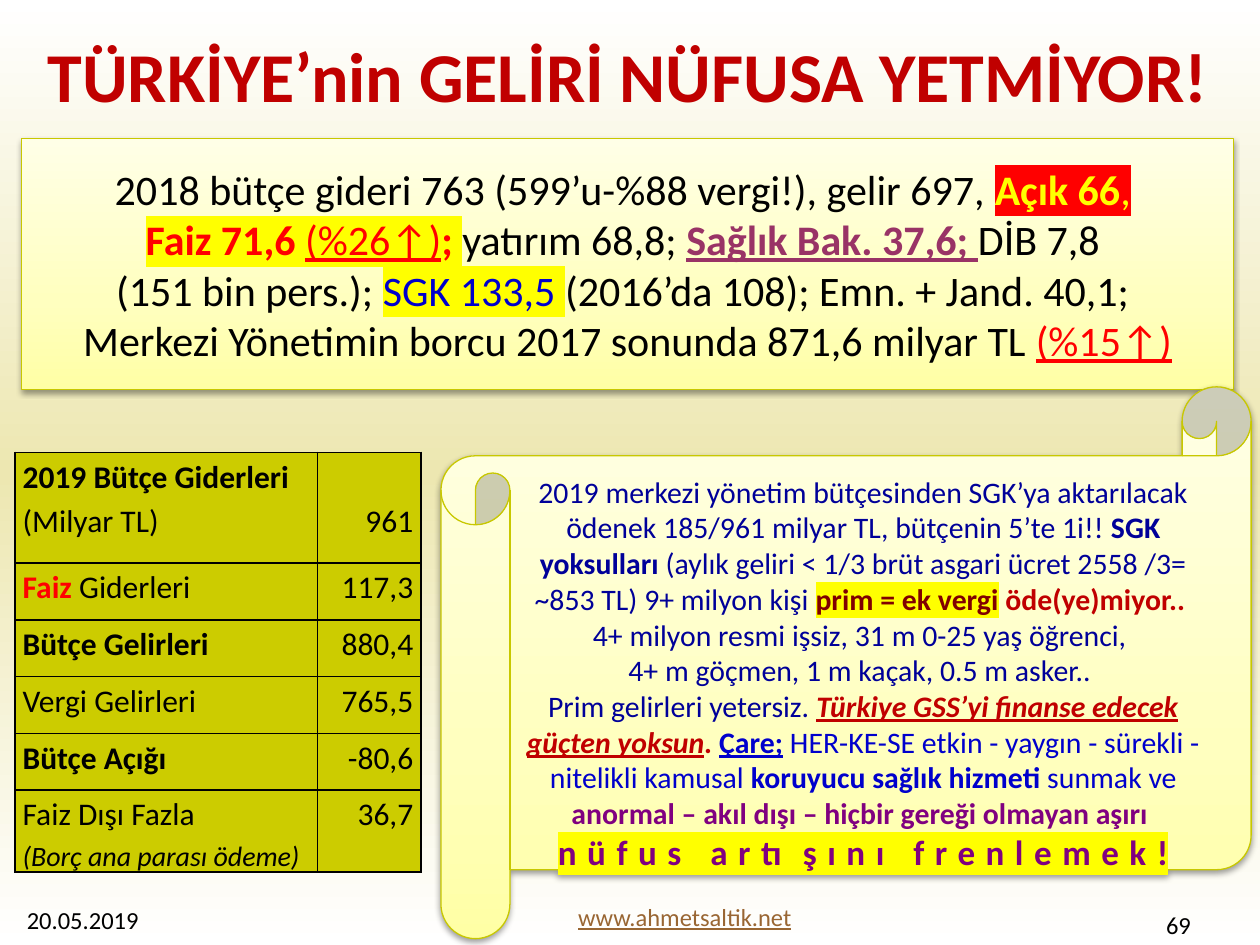
from copy import deepcopy

from lxml import etree
from pptx import Presentation
from pptx.dml.color import RGBColor
from pptx.enum.shapes import MSO_SHAPE
from pptx.enum.text import MSO_ANCHOR, PP_ALIGN
from pptx.oxml.ns import qn
from pptx.util import Emu, Pt

PX = 9144  # 100 px to the inch
LEFT, CENTER, RIGHT = PP_ALIGN.LEFT, PP_ALIGN.CENTER, PP_ALIGN.RIGHT
TOP, MIDDLE = MSO_ANCHOR.TOP, MSO_ANCHOR.MIDDLE
RECTANGLE, SCROLL = MSO_SHAPE.RECTANGLE, MSO_SHAPE.HORIZONTAL_SCROLL

COLORS = {
    "black": "000000", "crimson": "C00000", "red": "FF0000", "yellow": "FFFF00",
    "plum": "993366", "blue": "0000CC", "navy": "000099", "maroon": "800000",
    "magenta": "990099", "purple": "800080", "brown": "996633",
    "olive": "CCCC00", "outline": "C8C800",
}
PAPER = [(0, "FFFFA5"), (35, "FFFFBF"), (100, "FFFFE7")]
BACKDROP = [(0, "FFFFFF"), (50, "EDE7B1"), (100, "FFFFFF")]


def px(length):
    return Emu(length * PX)


def rgb(name):
    return RGBColor.from_string(COLORS[name])


def add_child(parent, tag, **attributes):
    child = etree.SubElement(parent, qn(tag))
    for name, value in attributes.items():
        child.set(name, str(value))
    return child


def set_gradient(fill, element, stops, angle):
    """Fill with any number of (percent, hex) stops; element holds the fill."""
    fill.gradient()
    fill.gradient_angle = angle
    stop_list = element.find(".//" + qn("a:gsLst"))
    for old_stop in list(stop_list):
        stop_list.remove(old_stop)
    for percent, color in stops:
        stop = add_child(stop_list, "a:gs", pos=percent * 1000)
        add_child(stop, "a:srgbClr", val=color)


class SlideBuilder:
    font = "Calibri"

    def __init__(self, slide):
        self.slide = slide

    def background(self, stops):
        set_gradient(self.slide.background.fill, self.slide.element, stops, 270)

    def add_run(self, paragraph, text, color="black", highlight=None, spacing=None,
                **formats):
        run = paragraph.add_run()
        run.text = text
        for name, value in {"name": self.font, **formats}.items():
            setattr(run.font, name, value)
        run.font.color.rgb = rgb(color)
        properties = run.font._element
        if spacing:
            properties.set("spc", str(spacing * 100))
        if highlight:
            mark = etree.Element(qn("a:highlight"))
            add_child(mark, "a:srgbClr", val=COLORS[highlight])
            properties.find(qn("a:solidFill")).addnext(mark)
        return properties

    def add_runs(self, frame, runs, align=LEFT, **base):
        """Add (text, formats) runs over base formats; \\n breaks the line."""
        paragraph = frame.paragraphs[0]
        paragraph.alignment = align
        for text, formats in runs:
            for index, line in enumerate(text.split("\n")):
                if index:
                    paragraph.add_line_break()
                    paragraph._p.findall(qn("a:br"))[-1].append(deepcopy(properties))
                if line:
                    properties = self.add_run(paragraph, line, **{**base, **formats})
        return paragraph

    def text(self, box, runs, align=LEFT, anchor=TOP, **base):
        frame = self.slide.shapes.add_textbox(*map(px, box)).text_frame
        frame.word_wrap = True
        frame.vertical_anchor = anchor
        self.add_runs(frame, runs, align, **base)

    def panel(self, kind, box, runs, anchor, margins, **base):
        shape = self.slide.shapes.add_shape(kind, *map(px, box))
        set_gradient(shape.fill, shape.element, PAPER, 90)
        shape.line.color.rgb = rgb("outline")
        shape.line.width = Pt(0.75)
        shape.shadow.inherit = False
        effects = shape.element.spPr.find(qn("a:effectLst"))
        shadow = add_child(effects, "a:outerShdw", blurRad=40000, dist=20000,
                           dir=5400000, rotWithShape=0)
        color = add_child(shadow, "a:srgbClr", val=COLORS["black"])
        add_child(color, "a:alpha", val=38000)
        frame = shape.text_frame
        frame.word_wrap = True
        frame.vertical_anchor = anchor
        for side, margin in zip(("left", "top", "right", "bottom"), margins):
            setattr(frame, "margin_" + side, px(margin))
        self.add_runs(frame, runs, CENTER, **base)

    def cell(self, cell, runs, align, margin_top):
        formats = {"margin_left": px(6), "margin_right": px(6),
                   "margin_top": px(margin_top), "margin_bottom": 0}
        for name, value in formats.items():
            setattr(cell, name, value)
        paragraph = self.add_runs(cell.text_frame, runs, align, size=Pt(18))
        paragraph.line_spacing = 1.15
        paragraph.space_after = Pt(10)
        properties = cell._tc.get_or_add_tcPr()
        for side in ("a:lnL", "a:lnR", "a:lnT", "a:lnB"):
            border = add_child(properties, side, w=Pt(1))
            fill = add_child(border, "a:solidFill")
            add_child(fill, "a:srgbClr", val=COLORS["black"])
        cell.fill.solid()
        cell.fill.fore_color.rgb = rgb("olive")

    def table(self, left, top, widths, heights, rows):
        """Each row is (label runs, value, top margin of the value)."""
        box = (left, top, sum(widths), sum(heights))
        table = self.slide.shapes.add_table(
            len(rows), len(widths), *map(px, box)).table
        table.first_row = table.horz_banding = False
        for column, width in zip(table.columns, widths):
            column.width = px(width)
        for index, (height, (label, value, offset)) in enumerate(zip(heights, rows)):
            table.rows[index].height = px(height)
            self.cell(table.cell(index, 0), label, LEFT, 0)
            self.cell(table.cell(index, 1), [(value, {})], RIGHT, offset)


BOLD = {"bold": True}
RISE = {"color": "red", "underline": True}
BUDGET_2018 = [
    ("2018 bütçe gideri 763 (599’u-%88 vergi!), gelir 697, ", {}),
    ("Açık 66", {"color": "yellow", "highlight": "red", **BOLD}),
    (",", {"color": "yellow", "highlight": "red"}),
    (" \n", {}),
    ("Faiz 71,6 ", {"color": "red", "highlight": "yellow", **BOLD}),
    ("(%26↑)", {"highlight": "yellow", **RISE}),
    (";", {"color": "red", "highlight": "yellow", **BOLD}),
    (" ", {"highlight": "yellow"}),
    ("yatırım 68,8; ", {}),
    ("Sağlık Bak. 37,6; ", {"color": "plum", "underline": True, **BOLD}),
    ("DİB 7,8 \n(151 bin pers.); ", {}),
    ("SGK 133,5 ", {"color": "blue", "highlight": "yellow"}),
    ("(2016’da 108); Emn. + Jand. 40,1; \n"
     "Merkezi Yönetimin borcu 2017 sonunda 871,6 milyar TL ", {}),
    ("(%15↑)", RISE),
]
BUDGET_2019 = [
    ([("2019 Bütçe Giderleri\n", BOLD), ("(Milyar TL)", {})], "961", 35),
    ([("Faiz ", {"color": "red", **BOLD}), ("Giderleri", {})], "117,3", 0),
    ([("Bütçe Gelirleri", BOLD)], "880,4", 0),
    ([("Vergi Gelirleri", {})], "765,5", 0),
    ([("Bütçe Açığı", BOLD)], "-80,6", 0),
    ([("Faiz Dışı Fazla\n", {}),
      ("(Borç ana parası ödeme)", {"size": Pt(16), "italic": True})], "36,7", 0),
]
SOCIAL_SECURITY = [
    ("2019 merkezi yönetim bütçesinden SGK’ya aktarılacak ödenek 185/961 milyar TL, "
     "bütçenin 5’te 1i!! ", {}),
    ("SGK yoksulları", BOLD),
    (" (aylık geliri < 1/3 brüt asgari ücret 2558 /3= ~853 TL) 9+ milyon kişi ", {}),
    ("prim = ek vergi", {"color": "maroon", "highlight": "yellow", **BOLD}),
    (" ", {"color": "magenta"}),
    ("öde(ye)miyor.. \n", {"color": "crimson", **BOLD}),
    ("4+ milyon resmi işsiz, 31 m 0-25 yaş öğrenci, \n"
     "4+ m göçmen, 1 m kaçak, 0.5 m asker.. \nPrim gelirleri yetersiz. ", {}),
    ("Türkiye GSS’yi finanse edecek güçten yoksun",
     {"color": "crimson", "italic": True, "underline": True, **BOLD}),
    (". ", {"color": "crimson", "italic": True, **BOLD}),
    ("Çare;", {"color": "blue", "underline": True, **BOLD}),
    (" HER-KE-SE etkin - yaygın - sürekli - nitelikli kamusal ", {"color": "blue"}),
    ("koruyucu sağlık hizmeti", {"color": "blue", **BOLD}),
    (" sunmak ve ", {"color": "blue"}),
    ("anormal – akıl dışı – hiçbir gereği olmayan aşırı \n", {"color": "purple", **BOLD}),
    ("nüfus artışını frenlemek!", {"color": "purple", "highlight": "yellow",
                                   "size": Pt(20), "spacing": 6, **BOLD}),
]


def main():
    presentation = Presentation()
    presentation.slide_width, presentation.slide_height = px(1000), px(750)
    builder = SlideBuilder(presentation.slides.add_slide(presentation.slide_layouts[6]))
    builder.background(BACKDROP)
    builder.text((3, 711, 117, 38), [("20.05.2019", {})], RIGHT, MIDDLE, size=Pt(14))
    builder.text((449, 711, 437, 30), [("www.ahmetsaltik.net", {})],
                 size=Pt(14), color="brown", underline=True)
    builder.text((747, 715, 208, 38), [("69", {})], RIGHT, MIDDLE, size=Pt(14))
    builder.panel(RECTANGLE, (17, 110, 962, 199), BUDGET_2018, MIDDLE,
                  (10, 5, 10, 5), size=Pt(24))
    builder.table(12, 359, (240, 82), (88, 45, 45, 45, 45, 65), BUDGET_2019)
    builder.panel(SCROLL, (350, 307, 643, 438), SOCIAL_SECURITY, TOP,
                  (7, 14, 7, 4), size=Pt(17), color="navy")
    builder.text((28, 21, 950, 77), [("TÜRKİYE’nin GELİRİ NÜFUSA YETMİYOR!", {})],
                 size=Pt(40), color="crimson", bold=True)
    presentation.save("out.pptx")


if __name__ == "__main__":
    main()
